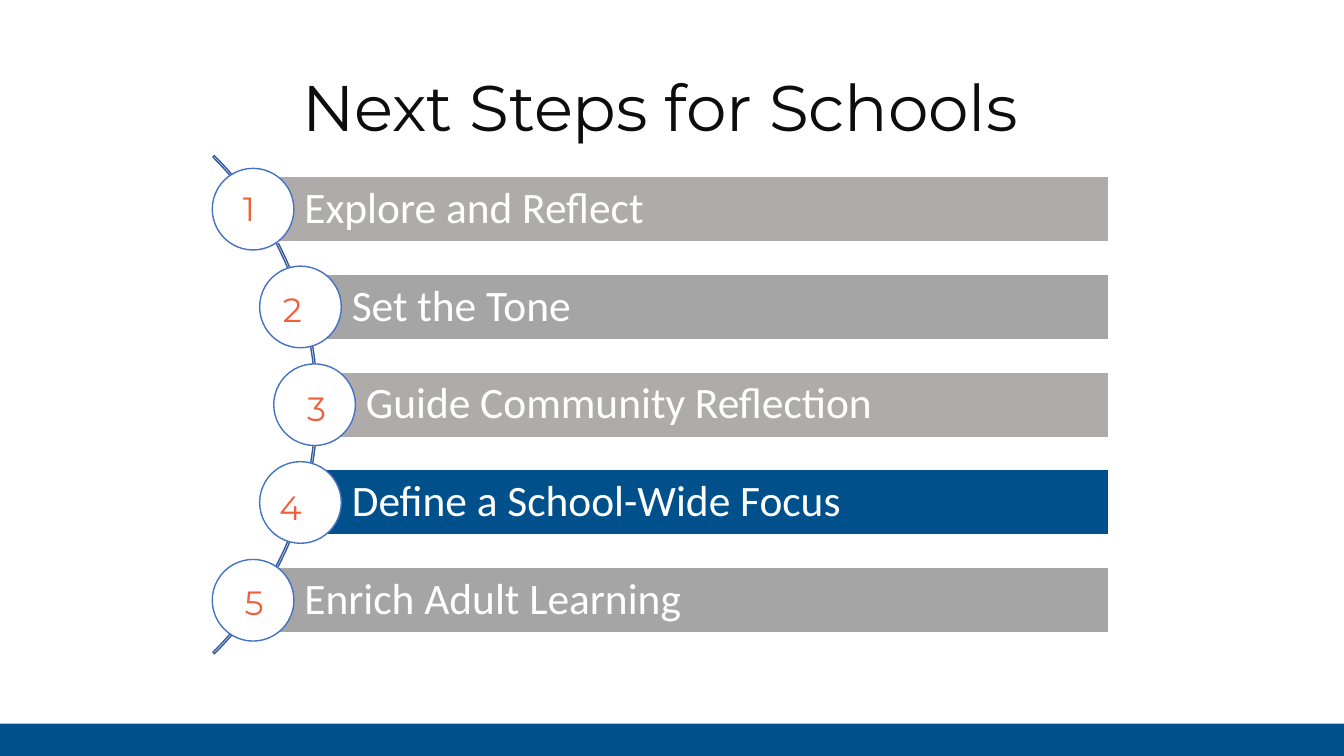
from dataclasses import dataclass

from pptx import Presentation
from pptx.dml.color import RGBColor
from pptx.enum.shapes import MSO_SHAPE
from pptx.enum.text import MSO_ANCHOR, PP_ALIGN
from pptx.util import Inches, Pt


@dataclass(frozen=True)
class Theme:
    ink: str = "0D0D0D"
    white: str = "FFFFFF"
    navy: str = "00518B"
    warm_gray: str = "AFABAB"
    gray: str = "A5A5A5"
    orange: str = "EF613C"
    ring: str = "4472C4"
    arc: str = "365B9D"
    display_font: str = "Montserrat"
    body_font: str = "Calibri"
    title_size: int = 46
    step_size: int = 31
    number_size: int = 24


def write(frame, text, *, font, size, color, align=PP_ALIGN.CENTER,
          anchor=MSO_ANCHOR.TOP, inset=(0.1, 0.05, 0.1, 0.05), spacing=1.0):
    frame.word_wrap = True
    frame.vertical_anchor = anchor
    frame.margin_left, frame.margin_top, frame.margin_right, frame.margin_bottom = map(Inches, inset)
    paragraph = frame.paragraphs[0]
    paragraph.alignment = align
    paragraph.line_spacing = spacing
    run = paragraph.add_run()
    run.text = text
    run.font.name = font
    run.font.size = Pt(size)
    run.font.color.rgb = RGBColor.from_string(color)


class StepsSlide:
    """Draws the elements of one slide in a shared theme."""

    def __init__(self, slide, theme):
        self.slide = slide
        self.theme = theme

    def shape(self, kind, box, fill=None, line=None):
        item = self.slide.shapes.add_shape(kind, *map(Inches, box))
        item.shadow.inherit = False
        if fill:
            item.fill.solid()
            item.fill.fore_color.rgb = RGBColor.from_string(fill)
        else:
            item.fill.background()
        if line:
            item.line.color.rgb = RGBColor.from_string(line)
            item.line.width = Pt(1)
        else:
            item.line.fill.background()
        return item

    def title(self, text, box):
        heading = self.slide.shapes.title
        heading.left, heading.top, heading.width, heading.height = map(Inches, box)
        write(heading.text_frame, text, font=self.theme.display_font,
              size=self.theme.title_size, color=self.theme.ink)

    def arc(self, box):
        curve = self.shape(MSO_SHAPE.BLOCK_ARC, box, line=self.theme.arc)
        for index, value in enumerate((189, 27, 0.003)):
            curve.adjustments[index] = value

    def bar(self, text, box, fill):
        step = self.shape(MSO_SHAPE.RECTANGLE, box, fill, self.theme.white)
        write(step.text_frame, text, font=self.theme.body_font, size=self.theme.step_size,
              color=self.theme.white, align=PP_ALIGN.LEFT, anchor=MSO_ANCHOR.MIDDLE,
              inset=(0.51, 0.09, 0.09, 0.09), spacing=0.9)

    def circle(self, center_x, center_y, diameter):
        box = (center_x - diameter / 2, center_y - diameter / 2, diameter, diameter)
        self.shape(MSO_SHAPE.OVAL, box, self.theme.white, self.theme.ring)

    def number(self, text, left, top):
        label = self.slide.shapes.add_textbox(*map(Inches, (left, top, 0.62, 0.5)))
        write(label.text_frame, text, font=self.theme.display_font,
              size=self.theme.number_size, color=self.theme.orange)


def main():
    theme = Theme()
    deck = Presentation()
    deck.slide_width, deck.slide_height = Inches(13.33), Inches(7.5)
    page = StepsSlide(deck.slides.add_slide(deck.slide_layouts[5]), theme)

    page.title("Next Steps for Schools", (1.45, 0.62, 10.19, 0.88))
    page.arc((-3.84, 0.52, 6.99, 6.99))

    steps = [
        ("Explore and Reflect", 2.51, theme.warm_gray, (2.16, 1.82)),
        ("Set the Tone", 2.98, theme.gray, (2.59, 2.82)),
        ("Guide Community Reflection", 3.12, theme.warm_gray, (2.83, 3.8)),
        ("Define a School-Wide Focus", 2.98, theme.navy, (2.57, 4.78)),
        ("Enrich Adult Learning", 2.51, theme.gray, (2.21, 5.72)),
    ]
    first_top, pitch, bar_height, right_edge = 1.75, 0.97, 0.65, 11.0
    for index, (text, left, fill, number_at) in enumerate(steps):
        top = first_top + index * pitch
        page.bar(text, (left, top, right_edge - left, bar_height), fill)
        page.circle(left, top + bar_height / 2, 0.81)
        page.number(str(index + 1), *number_at)

    page.shape(MSO_SHAPE.RECTANGLE, (0, 7.18, 13.33, 0.32), theme.navy)
    deck.save("out.pptx")


if __name__ == "__main__":
    main()
